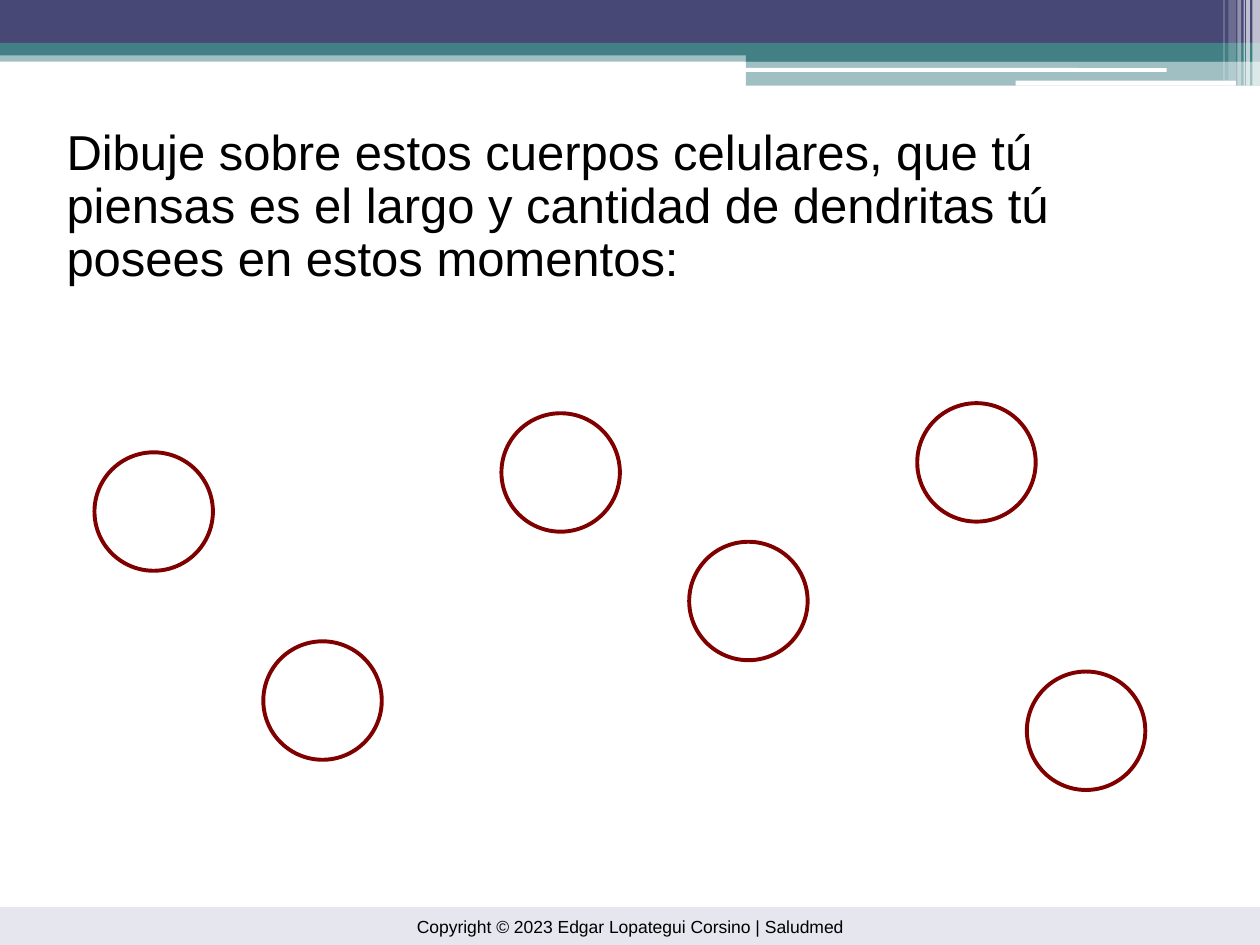
import collections

import pptx
import pptx.dml.color
import pptx.enum.shapes
import pptx.enum.text
import pptx.oxml.ns
import pptx.util
from lxml import etree

COLORS = {
    "navy": "484876",
    "teal": "438086",
    "white": "FFFFFF",
    "lavender": "E6E6EF",
    "black": "000000",
    "maroon": "800000",
}
COLUMNS, ROWS = 1000, 750
WIDTH, HEIGHT = pptx.util.Inches(10), pptx.util.Inches(7.5)
SHAPES = pptx.enum.shapes.MSO_SHAPE
ALIGN = pptx.enum.text.PP_ALIGN

# Boxes are measured in grid columns and rows.
Box = collections.namedtuple("Box", "left top width height")

PROMPT = (
    "Dibuje sobre estos cuerpos celulares, que tú",
    "piensas es el largo y cantidad de dendritas tú",
    "posees en estos momentos:",
)
COPYRIGHT = "Copyright © 2023 Edgar Lopategui Corsino | Saludmed"


def color(name):
    return pptx.dml.color.RGBColor.from_string(COLORS[name])


def inside(outer, left, top, width, height):
    """Move a box given relative to outer onto the page grid."""
    return Box(outer.left + left, outer.top + top, width, height)


def lengths(box):
    return (
        round(box.left * WIDTH / COLUMNS),
        round(box.top * HEIGHT / ROWS),
        round(box.width * WIDTH / COLUMNS),
        round(box.height * HEIGHT / ROWS),
    )


def add_shape(page, kind, box, fill=None, opacity=100):
    """Add a shape without shadow or line; opacity is a percentage."""
    shape = page.shapes.add_shape(kind, *lengths(box))
    shape.shadow.inherit = False
    shape.line.fill.background()
    if fill is None:
        shape.fill.background()
        return shape
    shape.fill.solid()
    shape.fill.fore_color.rgb = color(fill)
    if opacity < 100:
        tint = shape.fill._xPr.find(".//" + pptx.oxml.ns.qn("a:srgbClr"))
        alpha = etree.SubElement(tint, pptx.oxml.ns.qn("a:alpha"))
        alpha.set("val", str(opacity * 1000))
    return shape


def write_para(para, text, size, para_format):
    para.text = text
    for name, value in para_format.items():
        setattr(para, name, value)
    font_format = {"name": "Arial", "size": pptx.util.Pt(size)}
    for name, value in font_format.items():
        setattr(para.font, name, value)
    para.font.color.rgb = color("black")


def draw_header(page, box):
    bands = (
        (0, 40, 1000, 9, "teal", 50),
        (0, 0, 1000, 34, "navy", 100),
        (0, 34, 1000, 10, "teal", 100),
        (592, 39, 408, 10, "teal", 100),
        (592, 48, 408, 20, "teal", 50),
    )
    for *place, fill, opacity in bands:
        add_shape(page, SHAPES.RECTANGLE, inside(box, *place), fill, opacity)

    for place in ((591, 54, 335, 3), (806, 64, 175, 4)):
        add_shape(page, SHAPES.ROUNDED_RECTANGLE, inside(box, *place), "white")

    stripes = (
        (994, 6, 68, 65),
        (989, 3, 68, 65),
        (987, 1, 68, 60),
        (982, 3, 68, 40),
        (975, 6, 64, 20),
        (971, 1, 64, 30),
    )
    for left, width, height, opacity in stripes:
        stripe = inside(box, left, 0, width, height)
        add_shape(page, SHAPES.RECTANGLE, stripe, "white", opacity)


def draw_footer(page, box):
    footer = add_shape(page, SHAPES.RECTANGLE, box, "lavender")
    footer.text_frame.vertical_anchor = pptx.enum.text.MSO_ANCHOR.MIDDLE
    write_para(footer.text_frame.paragraphs[0], COPYRIGHT, 10,
               {"alignment": ALIGN.CENTER})


def draw_prompt(page, box):
    frame = page.shapes.add_textbox(*lengths(box)).text_frame
    frame.word_wrap = True
    frame.auto_size = pptx.enum.text.MSO_AUTO_SIZE.SHAPE_TO_FIT_TEXT
    indent = pptx.util.Inches(0.42)
    for index, line in enumerate(PROMPT):
        para = frame.add_paragraph() if index else frame.paragraphs[0]
        properties = para._p.get_or_add_pPr()
        properties.set("marL", str(indent))
        properties.set("indent", str(-indent))
        write_para(para, line, 28,
                   {"alignment": ALIGN.LEFT, "line_spacing": 0.9})


def draw_cell_bodies(page, box):
    diameter = 94
    corners = ((0, 39), (134, 189), (472, 110), (653, 0), (323, 8), (740, 213))
    for left, top in corners:
        place = inside(box, left, top, diameter, diameter)
        cell_body = add_shape(page, SHAPES.OVAL, place)
        cell_body.line.color.rgb = color("maroon")
        cell_body.line.width = pptx.util.Pt(2.25)


def main():
    deck = pptx.Presentation()
    deck.slide_width, deck.slide_height = WIDTH, HEIGHT
    page = deck.slides.add_slide(deck.slide_layouts[6])
    draw_header(page, Box(0, 0, COLUMNS, 68))
    draw_footer(page, Box(0, 720, COLUMNS, 30))
    draw_prompt(page, Box(43, 97, 906, 136))
    draw_cell_bodies(page, Box(75, 320, 834, 307))
    deck.save("out.pptx")


if __name__ == "__main__":
    main()
